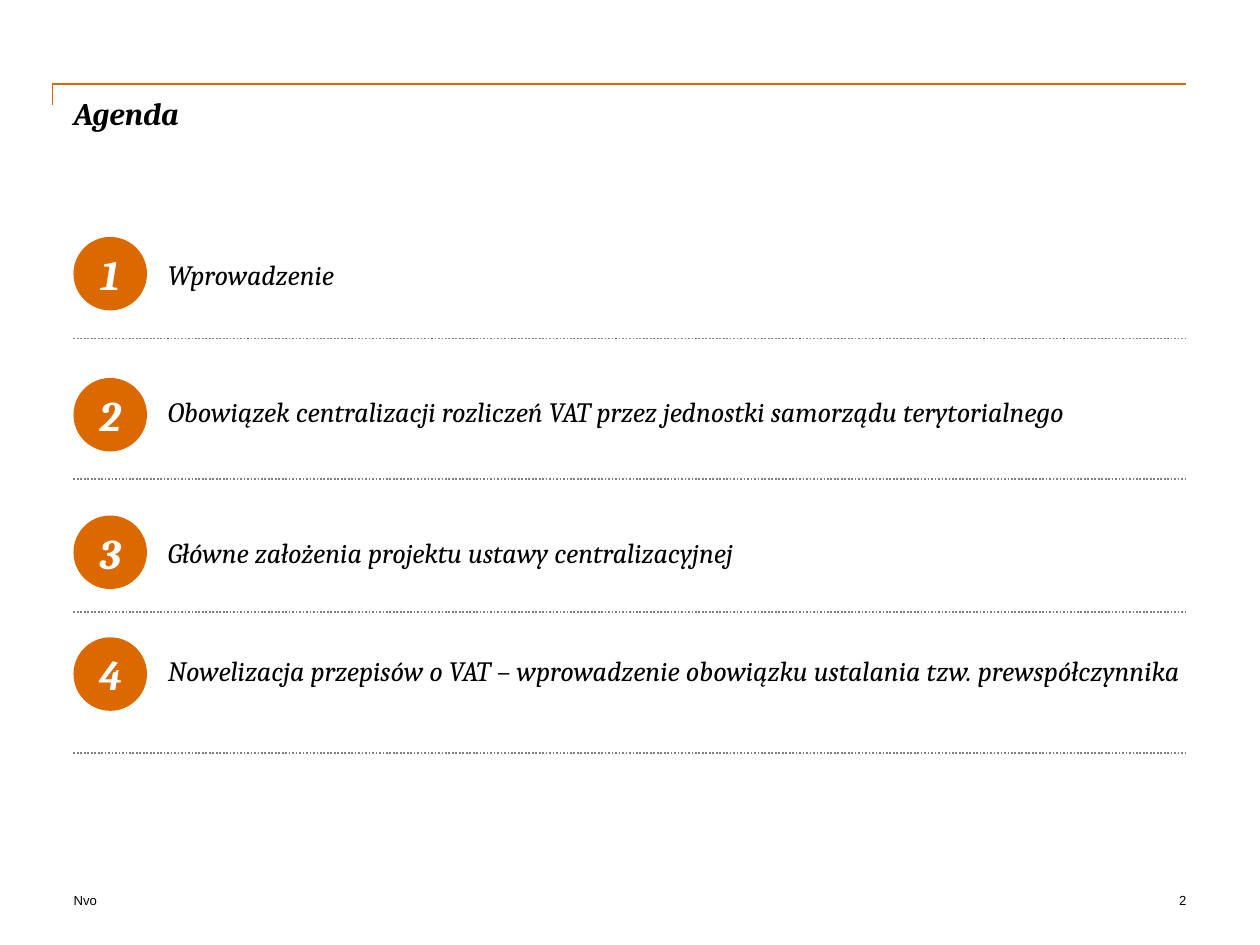
from lxml import etree
from pptx import Presentation
from pptx.dml.color import RGBColor
from pptx.enum import dml, shapes, text
from pptx.oxml import ns
from pptx.util import Pt

COLOURS = {"accent": "DC6900", "rule": "808080", "ink": "000000", "number": "FFFFFF"}
SERIF, SANS = "Cambria", "Arial"
LEFT, RIGHT = 42, 678
TOPIC_LEFT = 96
CIRCLE = 42
LINE_HEIGHT = 19.4

TITLE = "Agenda"
FOOTER, PAGE_NUMBER = "Nvo", "2"
# topic, circle top, text middle, rule below
TOPICS = [
    ("Wprowadzenie", 135.4, 156.6, 193.5),
    ("Obowiązek centralizacji rozliczeń VAT przez jednostki samorządu terytorialnego",
     216, 235.2, 273.6),
    ("Główne założenia projektu ustawy centralizacyjnej", 294.6, 315.7, 349.8),
    ("Nowelizacja przepisów o VAT – wprowadzenie obowiązku ustalania tzw. prewspółczynnika",
     364.2, 383.2, 430.4),
]


def colour(name):
    return RGBColor.from_string(COLOURS[name])


def write(shape, words, font, size, ink="ink", bold=False, italic=False,
          align=text.PP_ALIGN.LEFT, anchor=text.MSO_ANCHOR.TOP):
    frame = shape.text_frame
    frame.text = words
    frame.word_wrap = True
    frame.vertical_anchor = anchor
    para = frame.paragraphs[0]
    para.alignment = align
    style = para.runs[0].font
    style.name, style.size = font, Pt(size)
    style.bold, style.italic = bold, italic
    style.color.rgb = colour(ink)


def add_text(page, left, top, width, height, words, font, size, **options):
    box = page.shapes.add_textbox(Pt(left), Pt(top), Pt(width), Pt(height))
    frame = box.text_frame
    frame.margin_left = frame.margin_right = frame.margin_top = frame.margin_bottom = 0
    write(box, words, font, size, **options)


def add_circle(page, top, number):
    circle = page.shapes.add_shape(shapes.MSO_SHAPE.OVAL, Pt(LEFT), Pt(top),
                                   Pt(CIRCLE), Pt(CIRCLE))
    circle.shadow.inherit = False
    circle.fill.solid()
    circle.fill.fore_color.rgb = colour("accent")
    circle.line.fill.background()
    write(circle, str(number), SERIF, 24, ink="number", bold=True, italic=True,
          align=text.PP_ALIGN.CENTER, anchor=text.MSO_ANCHOR.MIDDLE)


def add_rule(page, y):
    rule = page.shapes.add_connector(shapes.MSO_CONNECTOR.STRAIGHT,
                                     Pt(LEFT), Pt(y), Pt(RIGHT), Pt(y))
    rule.line.color.rgb = colour("rule")
    rule.line.width = Pt(1)
    rule.line.dash_style = dml.MSO_LINE.ROUND_DOT
    etree.SubElement(rule._element.spPr, ns.qn("a:effectLst"))


def add_corner_line(page):
    builder = page.shapes.build_freeform(Pt(30), Pt(60))
    builder.add_line_segments([(Pt(30), Pt(48)), (Pt(RIGHT), Pt(48))], close=False)
    corner = builder.convert_to_shape()
    corner.shadow.inherit = False
    corner.fill.background()
    corner.line.color.rgb = colour("accent")
    corner.line.width = Pt(1)


def main():
    deck = Presentation()
    deck.slide_width, deck.slide_height = Pt(720), Pt(540)
    page = deck.slides.add_slide(deck.slide_layouts[6])

    # Heading
    add_corner_line(page)
    add_text(page, LEFT, 54, RIGHT - LEFT, 72, TITLE, SERIF, 18, bold=True, italic=True)

    # Numbered topics
    for number, (topic, circle_top, middle, rule_y) in enumerate(TOPICS, 1):
        add_circle(page, circle_top, number)
        add_text(page, TOPIC_LEFT, middle - LINE_HEIGHT / 2, RIGHT - TOPIC_LEFT, LINE_HEIGHT,
                 topic, SERIF, 16, italic=True, anchor=text.MSO_ANCHOR.MIDDLE)
        add_rule(page, rule_y)

    # Footer
    add_text(page, LEFT, 510, 204, 12, FOOTER, SANS, 7.5)
    add_text(page, RIGHT - 120, 510, 120, 12, PAGE_NUMBER, SANS, 7.5,
             align=text.PP_ALIGN.RIGHT)

    deck.save("out.pptx")


if __name__ == "__main__":
    main()
